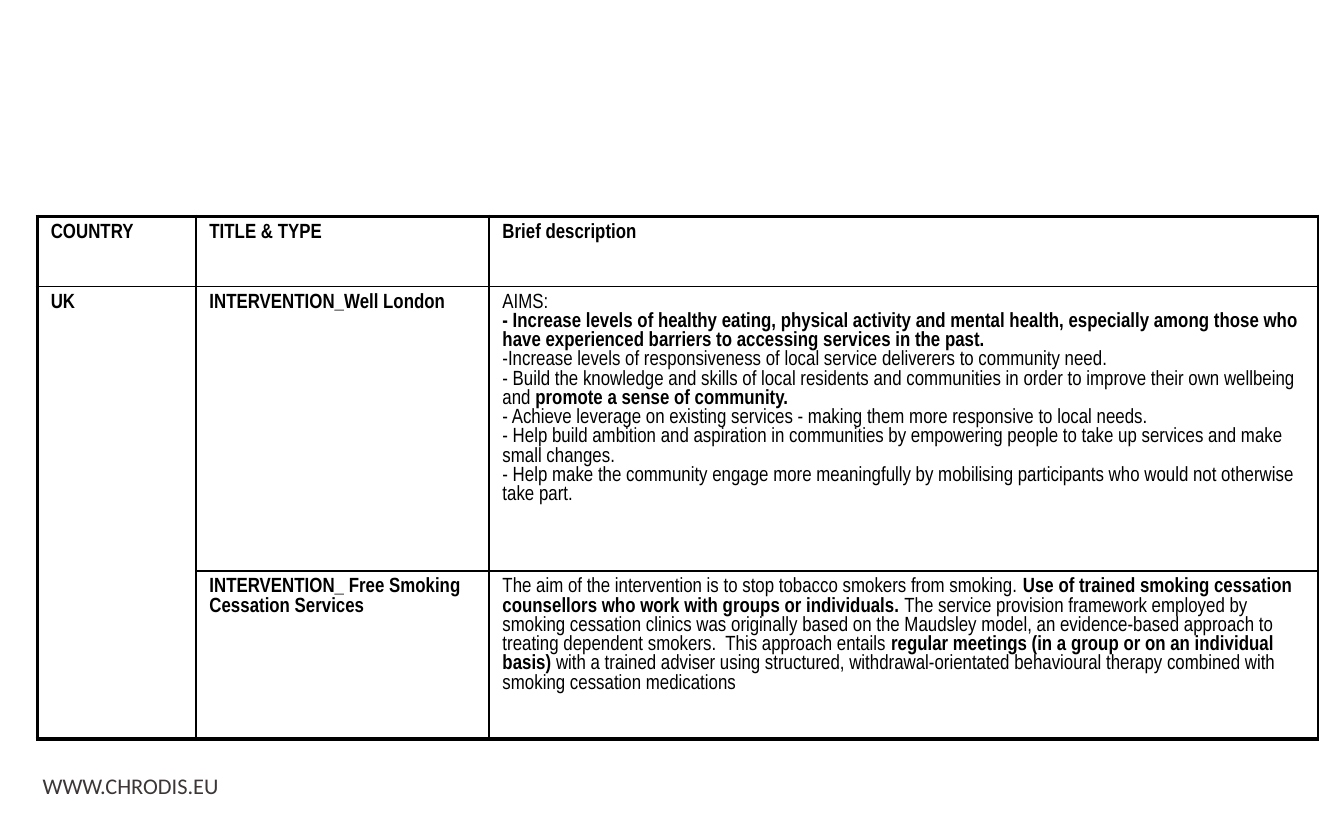
from lxml.etree import SubElement
from pptx import Presentation
from pptx.dml.color import RGBColor
from pptx.oxml import parse_xml
from pptx.oxml.ns import nsdecls
from pptx.util import Pt

COLORS = {"ink": "000000", "foot": "3C3636"}
THIN, THICK = 1, 2.25

# Each cell is a list of lines; each line is a list of (text, bold) runs
HEAD = ["COUNTRY", "TITLE & TYPE", "Brief description"]
AIMS = [
    [("AIMS:", False)],
    [("- Increase levels of healthy eating, physical activity and mental health, "
      "especially among those who have experienced barriers to accessing services "
      "in the past.", True)],
    [("-Increase levels of responsiveness of local service deliverers to "
      "community need.", False)],
    [("- Build the knowledge and skills of local residents and communities in "
      "order to improve their own wellbeing and ", False),
     ("promote a sense of community.", True)],
    [("- Achieve leverage on existing services - making them more responsive to "
      "local needs.", False)],
    [("- Help build ambition and aspiration in communities by empowering people "
      "to take up services and make small changes.", False)],
    [("- Help make the community engage more meaningfully by mobilising "
      "participants who would not otherwise take part.", False)],
]
SMOKING = [[
    ("The aim of the intervention is to stop tobacco smokers from smoking. ", False),
    ("Use of trained smoking cessation counsellors who work with groups or "
     "individuals. ", True),
    ("The service provision framework employed by smoking cessation clinics was "
     "originally based on the Maudsley model, an evidence-based approach to "
     "treating dependent smokers.  This approach entails ", False),
    ("regular meetings (in a group or on an individual basis) ", True),
    ("with a trained adviser using structured, withdrawal-orientated behavioural "
     "therapy combined with smoking cessation medications", False),
]]
ROWS = [
    HEAD,
    ["UK", "INTERVENTION_Well London", AIMS],
    [None, "INTERVENTION_ Free Smoking Cessation Services", SMOKING],
]


def write(frame, text, font="Arial Narrow", size=11, color="ink", bold=True):
    """Fill a frame from a string or from lines of (text, bold) runs."""
    lines = [[(text, bold)]] if isinstance(text, str) else text
    para = frame.paragraphs[0]
    for i, line in enumerate(lines):
        if i:
            para.add_line_break()
        for words, heavy in line:
            run = para.add_run()
            run.text = words
            run.font.name = font
            run.font.size = Pt(size)
            run.font.bold = heavy
            run.font.color.rgb = RGBColor.from_string(COLORS[color])


class Page:
    def __init__(self, slide):
        self.slide = slide
        self.pad = (7.2, 3.6)

    def label(self, text, left, top, width, height, **style):
        box = self.slide.shapes.add_textbox(Pt(left), Pt(top), Pt(width), Pt(height))
        box.text_frame.word_wrap = True
        write(box.text_frame, text, **style)

    def edge(self, cell, widths):
        props = cell._tc.get_or_add_tcPr()
        for i, (side, width) in enumerate(zip("LRTB", widths)):
            line = parse_xml(f'<a:ln{side} {nsdecls("a")} w="{Pt(width)}"/>')
            fill = SubElement(line, f"{{{line.nsmap['a']}}}solidFill")
            SubElement(fill, f"{{{line.nsmap['a']}}}srgbClr", val=COLORS["ink"])
            props.insert(i, line)

    def grid(self, rows, left, top, cols, heights):
        shape = self.slide.shapes.add_table(
            len(rows), len(cols), Pt(left), Pt(top), Pt(sum(cols)), Pt(sum(heights)))
        table = shape.table
        table.first_row = table.horz_banding = False
        for col, width in zip(table.columns, cols):
            col.width = Pt(width)
        for row, height in zip(table.rows, heights):
            row.height = Pt(height)
        # The country spans both of its interventions
        table.cell(1, 0).merge(table.cell(2, 0))
        last = len(rows) - 1
        for r, row in enumerate(rows):
            for c, text in enumerate(row):
                cell = table.cell(r, c)
                cell.fill.background()
                cell.margin_left = cell.margin_right = Pt(self.pad[0])
                cell.margin_top = cell.margin_bottom = Pt(self.pad[1])
                # Thick frame on the left, top and bottom; thin lines elsewhere
                ends = r == last or (cell.is_merge_origin and r + cell.span_height > last)
                self.edge(cell, (THIN if c else THICK, THIN,
                                 THIN if r else THICK, THICK if ends else THIN))
                if text:
                    write(cell.text_frame, text)


def main():
    deck = Presentation()
    deck.slide_width, deck.slide_height = Pt(720), Pt(448)
    page = Page(deck.slides.add_slide(deck.slide_layouts[6]))

    # Footer address
    page.label("WWW.CHRODIS.EU", 15.8, 410.4, 194.4, 21.6,
               font="Calibri", size=12, color="foot", bold=False)
    # Table of interventions
    page.grid(ROWS, 20, 116, cols=(85, 157, 444), heights=(37.5, 151, 90))

    deck.save("out.pptx")


if __name__ == "__main__":
    main()
